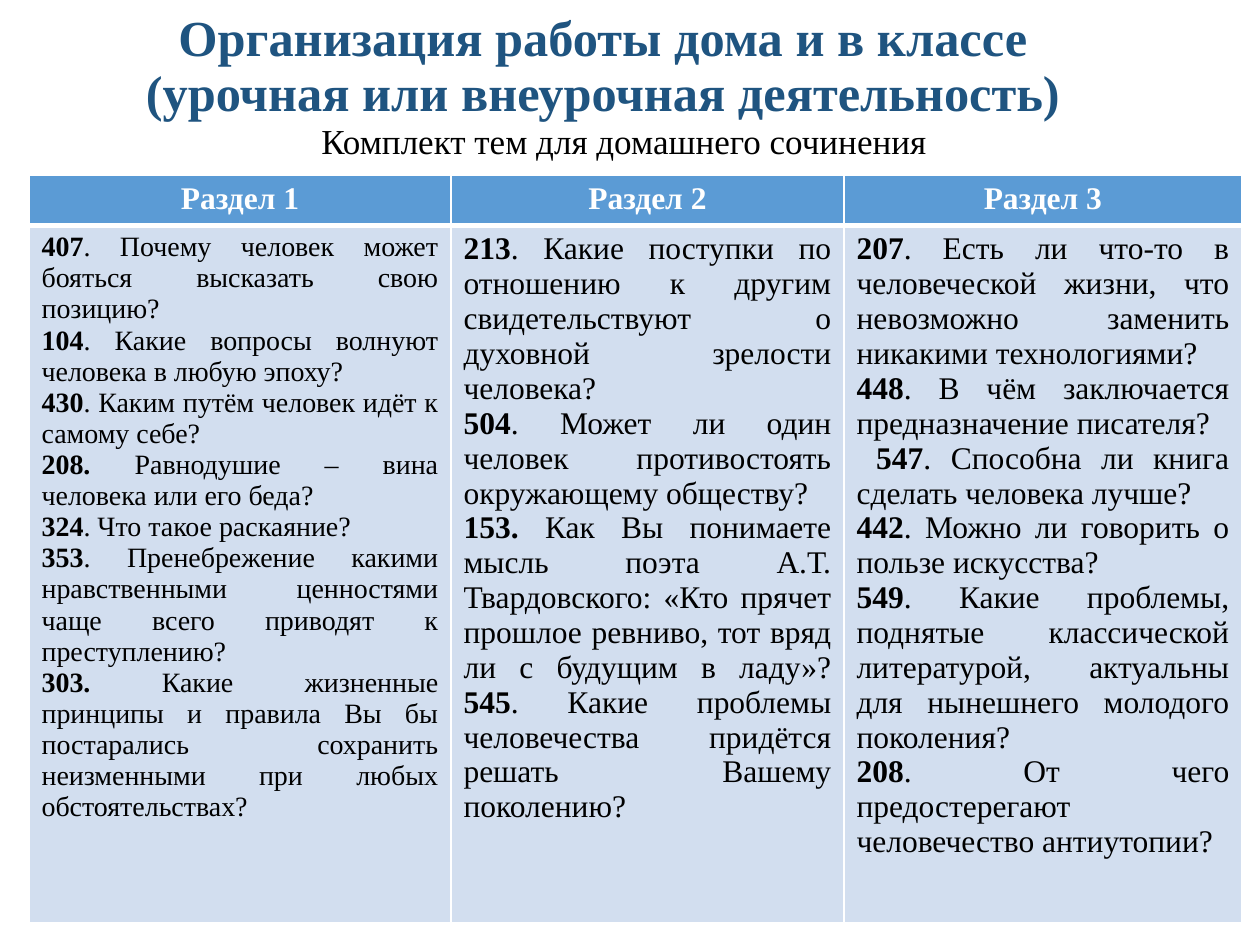
import pptx
import pptx.dml.color
import pptx.enum.text
import pptx.oxml.ns
import pptx.util
from lxml import etree

RGBColor = pptx.dml.color.RGBColor
ALIGN = pptx.enum.text.PP_ALIGN
ANCHOR = pptx.enum.text.MSO_ANCHOR

TITLE_BLUE = RGBColor(0x1F, 0x54, 0x80)
HEADER_BLUE = RGBColor(0x5B, 0x9B, 0xD5)
CELL_BLUE = RGBColor(0xD2, 0xDE, 0xEF)
WHITE = RGBColor(0xFF, 0xFF, 0xFF)
BLACK = RGBColor(0, 0, 0)

FONT_NAME = "Times New Roman"
PX_PER_INCH = 126
BOLD_MARK = "**"

# Each section: heading, text size, topics with the bold parts marked
SECTIONS = [
    ("Раздел 1", 16, [
        "**407**. Почему человек может бояться высказать свою позицию?",
        "**104**. Какие вопросы волнуют человека в любую эпоху?",
        "**430**. Каким путём человек идёт к самому себе?",
        "**208. **Равнодушие – вина человека или его беда?",
        "**324**. Что такое раскаяние?",
        "**353**. Пренебрежение какими нравственными ценностями чаще всего "
        "приводят к преступлению?",
        "**303. **Какие жизненные принципы и правила Вы бы постарались "
        "сохранить неизменными при любых обстоятельствах?",
    ]),
    ("Раздел 2", 18, [
        "**213**. Какие поступки по отношению к другим свидетельствуют о "
        "духовной зрелости человека?",
        "**504**. Может ли один человек противостоять окружающему обществу?",
        "**153. **Как Вы понимаете мысль поэта А.Т. Твардовского: «Кто прячет "
        "прошлое ревниво, тот вряд ли с будущим в ладу»?** 545**. Какие "
        "проблемы человечества придётся решать Вашему поколению?",
    ]),
    ("Раздел 3", 18, [
        "**207**. Есть ли что-то в человеческой жизни, что невозможно "
        "заменить никакими технологиями?",
        "**448**. В чём заключается предназначение писателя?",
        " **547**. Способна ли книга сделать человека лучше?",
        "**442**. Можно ли говорить о пользе искусства?",
        "**549**. Какие проблемы, поднятые классической литературой, "
        "актуальны для нынешнего молодого поколения?",
        "**208**. От чего предостерегают человечество антиутопии?",
    ]),
]


def px(length):
    return pptx.util.Emu(round(length * 914400 / PX_PER_INCH))


def apply_format(target, values):
    for name, value in values.items():
        setattr(target, name, value)


def write_paragraph(paragraph, text, size, color, layout, bold=False):
    """Write text whose marked parts are bold."""
    apply_format(paragraph, layout)
    for index, part in enumerate(text.split(BOLD_MARK)):
        if part:
            run = paragraph.add_run()
            run.text = part
            apply_format(run.font, {"name": FONT_NAME, "size": pptx.util.Pt(size),
                                    "bold": bold or index % 2 == 1})
            run.font.color.rgb = color


def add_heading(slide, box, text, size, color, anchor, bold=False):
    shape = slide.shapes.add_textbox(*map(px, box))
    apply_format(shape.text_frame, {"word_wrap": True, "vertical_anchor": anchor})
    write_paragraph(shape.text_frame.paragraphs[0], text, size, color,
                    {"alignment": ALIGN.CENTER, "line_spacing": 0.9}, bold)


def style_cell(cell, fill, top, bottom):
    """Give a cell white borders, in points, and a plain fill."""
    properties = cell._tc.get_or_add_tcPr()
    for side, width in {"L": 1, "R": 1, "T": top, "B": bottom}.items():
        line = etree.SubElement(properties, pptx.oxml.ns.qn("a:ln" + side),
                                w=str(pptx.util.Pt(width)))
        solid = etree.SubElement(line, pptx.oxml.ns.qn("a:solidFill"))
        etree.SubElement(solid, pptx.oxml.ns.qn("a:srgbClr"), val=str(WHITE))
    cell.fill.solid()
    cell.fill.fore_color.rgb = fill


def add_topic_table(slide, box, column_widths, row_heights):
    table = slide.shapes.add_table(len(row_heights), len(SECTIONS),
                                   *map(px, box)).table
    for column, width in zip(table.columns, column_widths):
        column.width = px(width)
    for row, height in zip(table.rows, row_heights):
        row.height = px(height)

    for index, (heading, size, topics) in enumerate(SECTIONS):
        header, body = table.cell(0, index), table.cell(1, index)
        style_cell(header, HEADER_BLUE, top=1, bottom=3)
        style_cell(body, CELL_BLUE, top=3, bottom=1)
        write_paragraph(header.text_frame.paragraphs[0], heading, 18, WHITE,
                        {"alignment": ALIGN.CENTER}, bold=True)
        for number, topic in enumerate(topics):
            frame = body.text_frame
            paragraph = frame.add_paragraph() if number else frame.paragraphs[0]
            write_paragraph(paragraph, topic, size, BLACK,
                            {"alignment": ALIGN.JUSTIFY})


def main():
    presentation = pptx.Presentation()
    apply_format(presentation, {"slide_width": px(1260), "slide_height": px(945)})
    slide = presentation.slides.add_slide(presentation.slide_layouts[6])

    # Title and subtitle
    add_heading(slide, (60, 15, 1086, 105),
                "Организация работы дома и в классе "
                "(урочная или внеурочная деятельность)",
                28.8, TITLE_BLUE, ANCHOR.MIDDLE, bold=True)
    add_heading(slide, (81, 118, 1086, 800),
                "Комплект тем для домашнего сочинения", 20, BLACK, ANCHOR.TOP)

    # Topics by section
    add_topic_table(slide, (29, 175, 1213, 745), (422, 393, 398), (48, 697))

    presentation.save("out.pptx")


if __name__ == "__main__":
    main()
